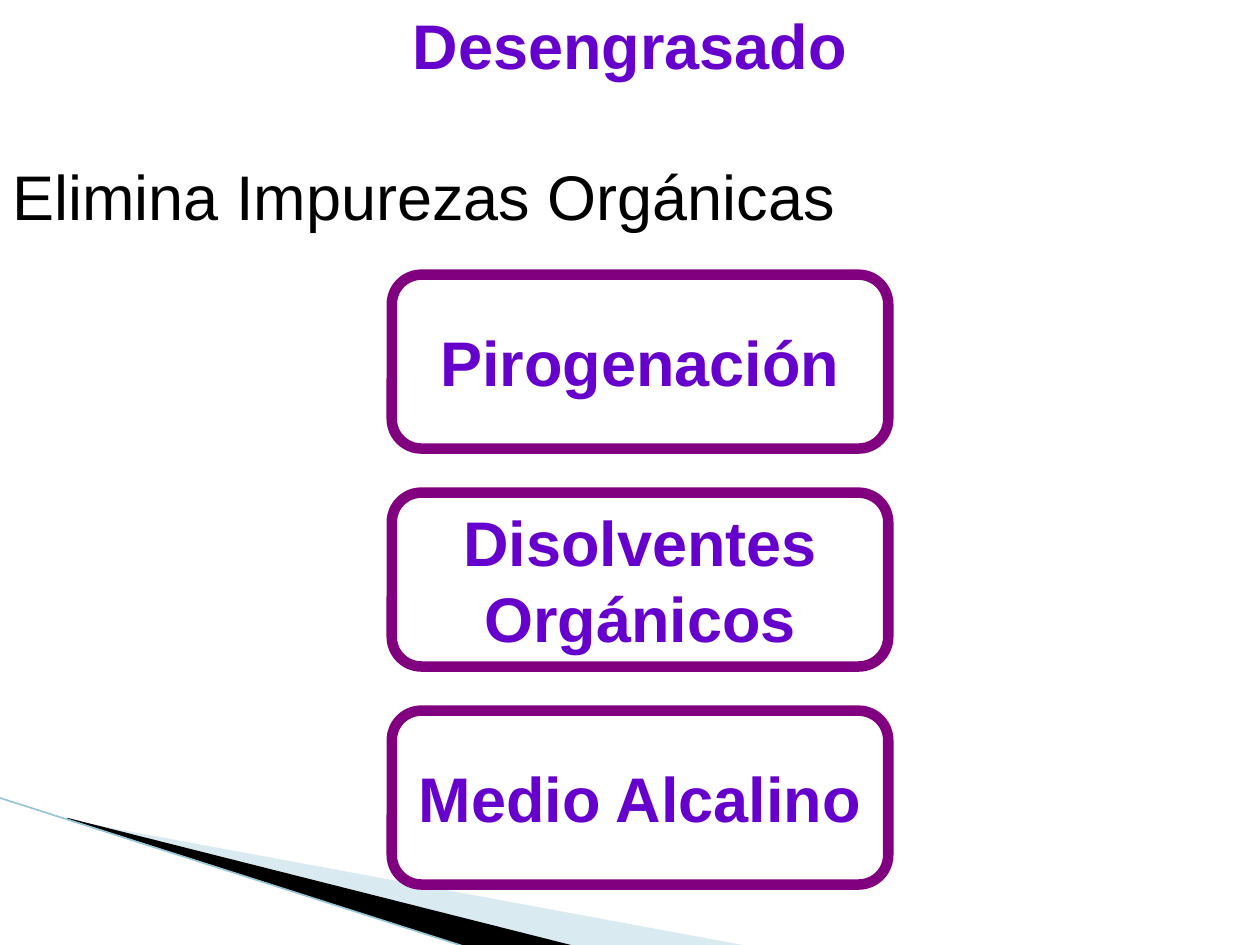
"""Build the slide on degreasing methods."""
import pptx
import pptx.dml.color
import pptx.enum.shapes
import pptx.enum.text
import pptx.oxml
import pptx.oxml.ns
import pptx.util
from lxml import etree

Inches = pptx.util.Inches
Pt = pptx.util.Pt
COLOURS = {"violet": "6600CC", "purple": "800080", "black": "000000",
           "white": "FFFFFF", "mist": "A0CBDC", "sky": "97C5D8"}
HEADING = {"name": "Arial", "size": Pt(36), "bold": True}
BODY = {"name": "Arial", "size": Pt(36), "bold": False}
CENTER = pptx.enum.text.PP_ALIGN.CENTER
LEFT = pptx.enum.text.PP_ALIGN.LEFT


def rgb(name):
    """Return the named colour."""
    return pptx.dml.color.RGBColor.from_string(COLOURS[name])


def write(para, text, font, colour, align):
    """Write one formatted run into a paragraph."""
    para.alignment = align
    para.line_spacing = Pt(43.2)
    span = para.add_run()
    span.text = text
    for key, value in font.items():
        setattr(span.font, key, value)
    span.font.color.rgb = rgb(colour)


deck = pptx.Presentation()
deck.slide_width, deck.slide_height = Inches(10), Inches(7.5)
page = deck.slides.add_slide(deck.slide_layouts[6])

wedges = [
    ("mist", 40, [(0.55, 6.51), (5.95, 7.51), (4.56, 7.51), (0.55, 6.5)]),
    ("black", 100, [(0.53, 6.49), (4.57, 7.51), (3.72, 7.52), (0.54, 6.5)]),
]
for colour, opacity, points in wedges:
    corners = [(Inches(x), Inches(y)) for x, y in points]
    builder = page.shapes.build_freeform(*corners[0])
    builder.add_line_segments(corners[1:], close=True)
    wedge = builder.convert_to_shape()
    wedge.shadow.inherit = False
    wedge.fill.solid()
    wedge.fill.fore_color.rgb = rgb(colour)
    wedge.line.fill.background()
    if opacity < 100:
        tint = wedge.fill._xPr.find(".//" + pptx.oxml.ns.qn("a:srgbClr"))
        alpha = etree.SubElement(tint, pptx.oxml.ns.qn("a:alpha"))
        alpha.set("val", str(opacity * 1000))

edge = page.shapes.add_connector(
    pptx.enum.shapes.MSO_CONNECTOR.STRAIGHT,
    Inches(-0.01), Inches(6.33), Inches(3.71), Inches(7.52))
edge.line.color.rgb = rgb("sky")
edge.line.width = Pt(0.95)
etree.SubElement(edge._element.spPr, pptx.oxml.ns.qn("a:effectLst"))

title_box = page.shapes.add_textbox(0, 0, Inches(10), Inches(1.9))
title_box.text_frame.word_wrap = True
write(title_box.text_frame.paragraphs[0], "Desengrasado", HEADING, "violet", CENTER)
purpose = title_box.text_frame.add_paragraph()
purpose.space_before = Pt(43.2)
write(purpose, "Elimina Impurezas Orgánicas", BODY, "black", LEFT)

methods = ["Pirogenación", "Disolventes Orgánicos", "Medio Alcalino"]
for row, method in enumerate(methods):
    box = page.shapes.add_shape(
        pptx.enum.shapes.MSO_SHAPE.ROUNDED_RECTANGLE,
        Inches(3.11), Inches(2.18 + 1.73 * row), Inches(3.94), Inches(1.38))
    box.shadow.inherit = False
    box.adjustments[0] = 0.17
    box.fill.solid()
    box.fill.fore_color.rgb = rgb("white")
    box.line.color.rgb = rgb("purple")
    box.line.width = Pt(6)
    box.text_frame.word_wrap = True
    box.text_frame.vertical_anchor = pptx.enum.text.MSO_ANCHOR.MIDDLE
    write(box.text_frame.paragraphs[0], method, HEADING, "violet", CENTER)

deck.save("out.pptx")
